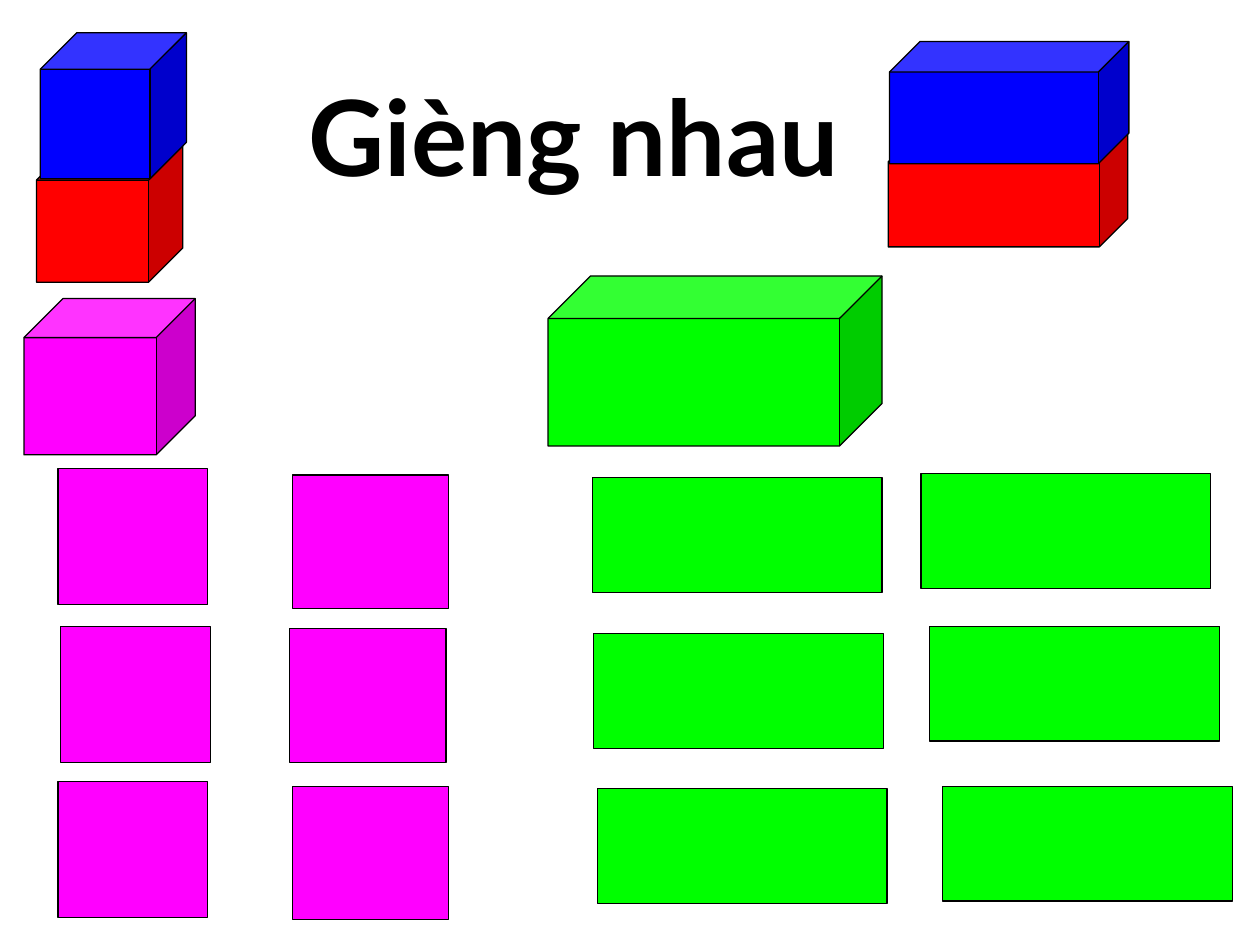
from dataclasses import dataclass

from pptx import Presentation
from pptx.dml.color import RGBColor
from pptx.enum.shapes import MSO_SHAPE
from pptx.enum.text import MSO_ANCHOR, MSO_AUTO_SIZE, PP_ALIGN
from pptx.util import Inches, Pt

CUBE = MSO_SHAPE.CUBE
RECTANGLE = MSO_SHAPE.RECTANGLE
PROCESS = MSO_SHAPE.FLOWCHART_PROCESS
TITLE_ONLY = 5


@dataclass(frozen=True)
class Theme:
    magenta: RGBColor = RGBColor(0xFF, 0x00, 0xFF)
    green: RGBColor = RGBColor(0x00, 0xFF, 0x00)
    red: RGBColor = RGBColor(0xFF, 0x00, 0x00)
    blue: RGBColor = RGBColor(0x00, 0x00, 0xFF)
    black: RGBColor = RGBColor(0x00, 0x00, 0x00)
    font: str = "Lato"
    title_size: int = 60
    line_width: float = 0.75


THEME = Theme()

# Left and top of each face, row by row; the faces are scattered by hand
LEFT_SQUARES = [(0.46, 3.72), (0.48, 4.97), (0.46, 6.2)]
RIGHT_SQUARES = [(2.32, 3.77), (2.3, 4.99), (2.32, 6.24)]
GREEN_FACES = [(4.7, 3.79), (7.31, 3.76), (4.71, 5.03),
               (7.38, 4.97), (4.74, 6.26), (7.48, 6.24)]

# Left, top, width, height and colour; each lower block precedes the one on it
BLOCKS = [
    (0.19, 2.37, 1.36, 1.24, THEME.magenta),
    (4.35, 2.19, 2.65, 1.35, THEME.green),
    (0.29, 1.16, 1.16, 1.08, THEME.red),
    (0.32, 0.26, 1.16, 1.16, THEME.blue),
    (7.05, 1.06, 1.9, 0.9, THEME.red),
    (7.06, 0.33, 1.9, 0.97, THEME.blue),
]


def place(shape, left, top, width, height):
    shape.left, shape.top = Inches(left), Inches(top)
    shape.width, shape.height = Inches(width), Inches(height)


def write_text(shape, text, *, size, color, font=THEME.font, bold=False,
               align=PP_ALIGN.LEFT, anchor=MSO_ANCHOR.TOP):
    frame = shape.text_frame
    frame.word_wrap = True
    frame.auto_size = MSO_AUTO_SIZE.SHAPE_TO_FIT_TEXT
    frame.vertical_anchor = anchor
    paragraph = frame.paragraphs[0]
    paragraph.alignment = align
    run = paragraph.add_run()
    run.text = text
    run.font.name = font
    run.font.size = Pt(size)
    run.font.bold = bold
    run.font.color.rgb = color


def add_solid(slide, kind, left, top, width, height, color):
    shape = slide.shapes.add_shape(kind, Inches(left), Inches(top),
                                   Inches(width), Inches(height))
    shape.shadow.inherit = False
    shape.fill.solid()
    shape.fill.fore_color.rgb = color
    shape.line.color.rgb = THEME.black
    shape.line.width = Pt(THEME.line_width)


def add_faces(slide, kind, positions, width, height, color):
    for left, top in positions:
        add_solid(slide, kind, left, top, width, height, color)


def main():
    presentation = Presentation()
    presentation.slide_width = Inches(10)
    presentation.slide_height = Inches(7.5)
    slide = presentation.slides.add_slide(
        presentation.slide_layouts[TITLE_ONLY])

    # Title
    title = slide.shapes.title
    place(title, 2.35, 0.52, 4.45, 1.1)
    write_text(title, "Gièng nhau", size=THEME.title_size,
               color=THEME.black, bold=True)

    # Flat faces
    add_faces(slide, RECTANGLE, LEFT_SQUARES, 1.19, 1.08, THEME.magenta)
    add_faces(slide, RECTANGLE, RIGHT_SQUARES, 1.24, 1.06, THEME.magenta)
    add_faces(slide, PROCESS, GREEN_FACES, 2.3, 0.91, THEME.green)

    # Solid blocks
    for left, top, width, height, color in BLOCKS:
        add_solid(slide, CUBE, left, top, width, height, color)

    presentation.save("out.pptx")


if __name__ == "__main__":
    main()
